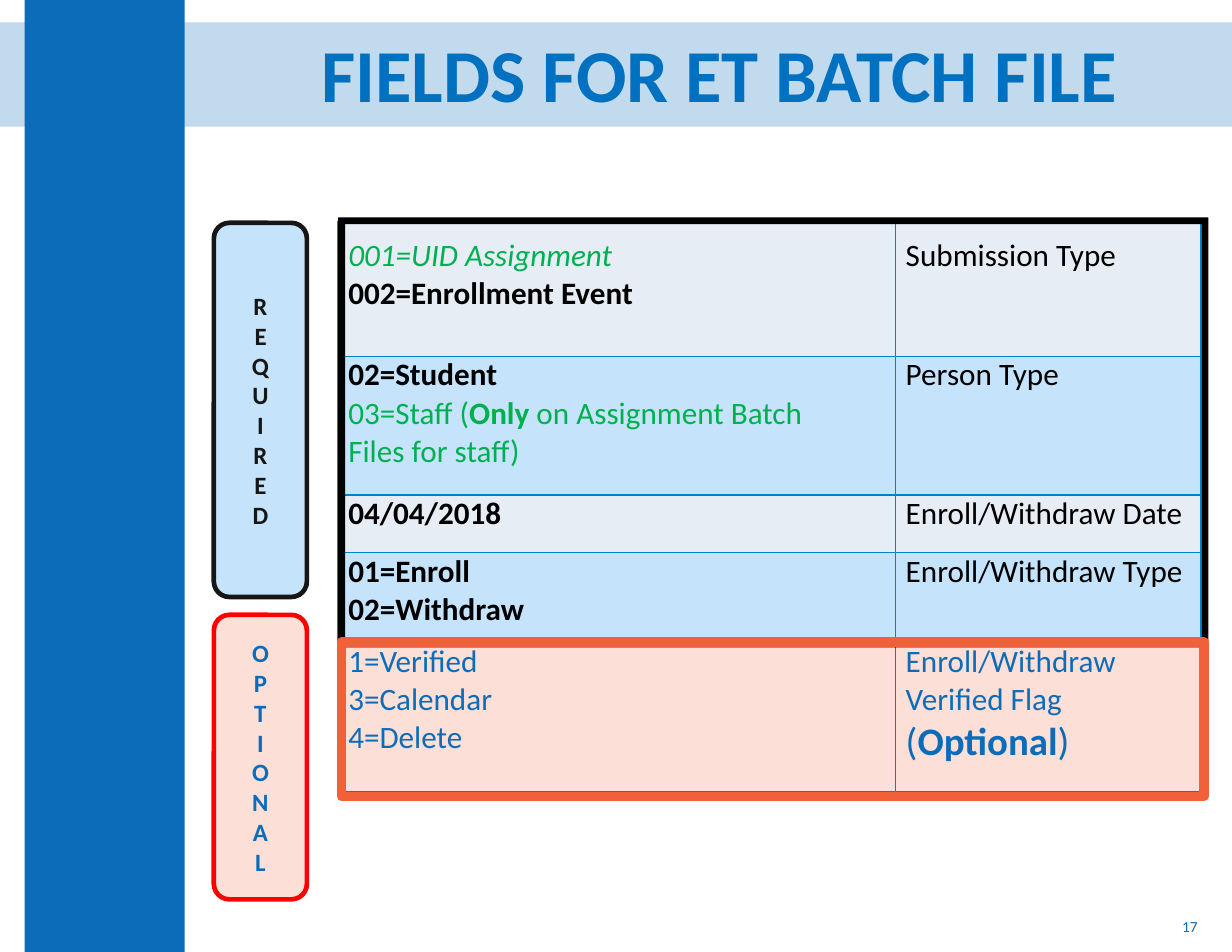
from lxml.etree import SubElement
from pptx import Presentation
from pptx.dml.color import RGBColor
from pptx.enum.shapes import MSO_SHAPE
from pptx.enum.text import MSO_ANCHOR, MSO_AUTO_SIZE, PP_ALIGN
from pptx.oxml.ns import qn
from pptx.util import Pt

THEME = {
    "font": "Calibri",
    "blue": "0D6CB9", "title": "0070C0", "grid": "0082C8", "ink": "161616",
    "black": "000000", "green": "00B050", "red": "FF0000", "orange": "F16038",
    "pale": "E7EDF5", "sky": "C5E3FB", "peach": "FCDFD7",
    "title_size": 48, "body_size": 20, "flag_size": 25, "label_size": 16, "number_size": 9.9,
}

TITLE = "FIELDS FOR ET BATCH FILE"
PAGE_NUMBER = "17"

PLAIN = {"color": "black"}
BOLD = {"color": "black", "bold": True}
GREEN = {"color": "green"}
BLUE = {"color": "blue"}
FLAG = {"color": "blue", "size": "flag_size"}

ROWS = [
    (86.4, "pale", 9.8,
     [[("001=UID Assignment", {**GREEN, "italic": True})], [("002=Enrollment Event", BOLD)]],
     [[("Submission Type", PLAIN)]]),
    (89.3, "sky", 0,
     [[("02=Student", BOLD)],
      [("03=Staff (", GREEN), ("Only ", {**GREEN, "bold": True}),
       ("on Assignment Batch Files for staff)", GREEN)]],
     [[("Person Type", PLAIN)]]),
    (36.9, "pale", 0, [[("04/04/2018", BOLD)]], [[("Enroll/Withdraw Date", PLAIN)]]),
    (58, "sky", 0,
     [[("01=Enroll", BOLD)], [("02=Withdraw", BOLD)]],
     [[("Enroll/Withdraw Type", PLAIN)]]),
    (95.8, "peach", 0,
     [[("1=Verified", BLUE)], [("3=Calendar", BLUE)], [("4=Delete", BLUE)]],
     [[("Enroll/Withdraw Verified Flag", BLUE)],
      [("(", FLAG), ("Optional", {**FLAG, "bold": True}), (")", FLAG)]]),
]
COLUMNS = [(358.4, 50), (196.2, 0)]
TABLE_LEFT, TABLE_TOP, CELL_INDENT = 217.4, 142.6, 6.5

BARS = [((0, 14.4, 792, 67), 25), ((15.8, 0, 103, 612), 100)]
LABELS = [
    ("REQUIRED", (137.5, 143.3, 59.8, 240.5), "sky", "ink", "ink"),
    ("OPTIONAL", (137.5, 395.3, 59.8, 182.9), "peach", "red", "blue"),
]
TITLE_BOX = (91.4, 17.3, 685.4, 58.3)
TITLE_INDENT = 115.2
NUMBER_BOX = (598.3, 579.6, 178.6, 32.4)
REQUIRED_FRAME = (217.4, 139.7, 776.9, 416.2)
FRAME_WIDTH = 4.5
OPTIONAL_FRAME = (219.6, 412.6, 554.4, 99.4)


def points(values):
    return [Pt(value) for value in values]


def color(name):
    return RGBColor.from_string(THEME[name])


def add_run(paragraph, text, style):
    run = paragraph.add_run()
    run.text = text
    settings = {
        "name": THEME["font"],
        "size": Pt(THEME[style.get("size", "body_size")]),
        "bold": style.get("bold", False),
        "italic": style.get("italic", False),
    }
    for attribute, value in settings.items():
        setattr(run.font, attribute, value)
    run.font.color.rgb = color(style["color"])


def set_frame(frame, **settings):
    for attribute, value in settings.items():
        setattr(frame, attribute, value)


def set_margins(target, left=0, top=0, right=0, bottom=0):
    set_frame(target, margin_left=Pt(left), margin_top=Pt(top),
              margin_right=Pt(right), margin_bottom=Pt(bottom))


def format_shape(shape, fill=None, line=None, width=0):
    shape.shadow.inherit = False
    if fill:
        shape.fill.solid()
        shape.fill.fore_color.rgb = color(fill)
    else:
        shape.fill.background()
    if line:
        shape.line.color.rgb = color(line)
        shape.line.width = Pt(width)
    else:
        shape.line.fill.background()


def add_bars(slide):
    for box, opacity in BARS:
        shape = slide.shapes.add_shape(MSO_SHAPE.RECTANGLE, *points(box))
        format_shape(shape, "blue")
        if opacity < 100:
            fill = shape.element.spPr.find(qn("a:solidFill"))
            SubElement(fill[0], qn("a:alpha"), val=str(opacity * 1000))
    return shape


def add_title(slide, bar):
    title = slide.shapes.title
    bar.element.addnext(title.element)
    title.left, title.top, title.width, title.height = points(TITLE_BOX)
    frame = title.text_frame
    set_margins(frame, left=TITLE_INDENT)
    set_frame(frame, vertical_anchor=MSO_ANCHOR.MIDDLE, word_wrap=True,
              auto_size=MSO_AUTO_SIZE.NONE)
    paragraph = frame.paragraphs[0]
    paragraph.alignment = PP_ALIGN.LEFT
    add_run(paragraph, TITLE, {"color": "title", "size": "title_size", "bold": True})


def add_page_number(slide):
    frame = slide.shapes.add_textbox(*points(NUMBER_BOX)).text_frame
    set_frame(frame, word_wrap=True, vertical_anchor=MSO_ANCHOR.MIDDLE)
    paragraph = frame.paragraphs[0]
    paragraph.alignment = PP_ALIGN.RIGHT
    add_run(paragraph, PAGE_NUMBER, {"color": "blue", "size": "number_size"})


def add_borders(cell):
    properties = cell._tc.get_or_add_tcPr()
    for position, side in enumerate(("lnL", "lnR", "lnT", "lnB")):
        line = SubElement(properties, qn(f"a:{side}"), w=str(Pt(1)))
        fill = SubElement(line, qn("a:solidFill"))
        SubElement(fill, qn("a:srgbClr"), val=THEME["grid"])
        properties.insert(position, line)


def fill_cell(cell, lines, fill, top, right):
    set_margins(cell, left=CELL_INDENT, top=top, right=right)
    cell.fill.solid()
    cell.fill.fore_color.rgb = color(fill)
    add_borders(cell)
    frame = cell.text_frame
    for index, runs in enumerate(lines):
        paragraph = frame.add_paragraph() if index else frame.paragraphs[0]
        for text, style in runs:
            add_run(paragraph, text, style)


def add_field_table(slide):
    width = sum(column[0] for column in COLUMNS)
    height = sum(row[0] for row in ROWS)
    table = slide.shapes.add_table(
        len(ROWS), len(COLUMNS), *points((TABLE_LEFT, TABLE_TOP, width, height))).table
    set_frame(table, first_row=False, horz_banding=False)
    for column, (column_width, _) in zip(table.columns, COLUMNS):
        column.width = Pt(column_width)
    for row, (row_height, fill, top, *contents) in zip(table.rows, ROWS):
        row.height = Pt(row_height)
        for cell, lines, (_, right) in zip(row.cells, contents, COLUMNS):
            fill_cell(cell, lines, fill, top, right)


def add_frames(slide):
    left, top, right, bottom = REQUIRED_FRAME
    inset = FRAME_WIDTH
    builder = slide.shapes.build_freeform(Pt(left), Pt(top))
    builder.add_line_segments(
        [points(corner) for corner in ((right, top), (right, bottom), (left, bottom))])
    left, top, right, bottom = left + inset, top + inset, right - inset, bottom - inset
    builder.move_to(Pt(left), Pt(top))
    builder.add_line_segments(
        [points(corner) for corner in ((left, bottom), (right, bottom), (right, top))])
    format_shape(builder.convert_to_shape(), "black")
    shape = slide.shapes.add_shape(MSO_SHAPE.RECTANGLE, *points(OPTIONAL_FRAME))
    format_shape(shape, line="orange", width=6)


def add_labels(slide):
    for text, box, fill, line, text_color in LABELS:
        shape = slide.shapes.add_shape(MSO_SHAPE.ROUNDED_RECTANGLE, *points(box))
        format_shape(shape, fill, line, 3)
        frame = shape.text_frame
        frame.vertical_anchor = MSO_ANCHOR.MIDDLE
        shape.element.txBody.find(qn("a:bodyPr")).set("vert", "wordArtVert")
        paragraph = frame.paragraphs[0]
        paragraph.alignment = PP_ALIGN.CENTER
        add_run(paragraph, text, {"color": text_color, "size": "label_size", "bold": True})


def main():
    presentation = Presentation()
    presentation.slide_width, presentation.slide_height = points((792, 612))
    slide = presentation.slides.add_slide(presentation.slide_layouts[5])
    add_title(slide, add_bars(slide))
    add_page_number(slide)
    add_field_table(slide)
    add_frames(slide)
    add_labels(slide)
    presentation.save("out.pptx")


if __name__ == "__main__":
    main()
